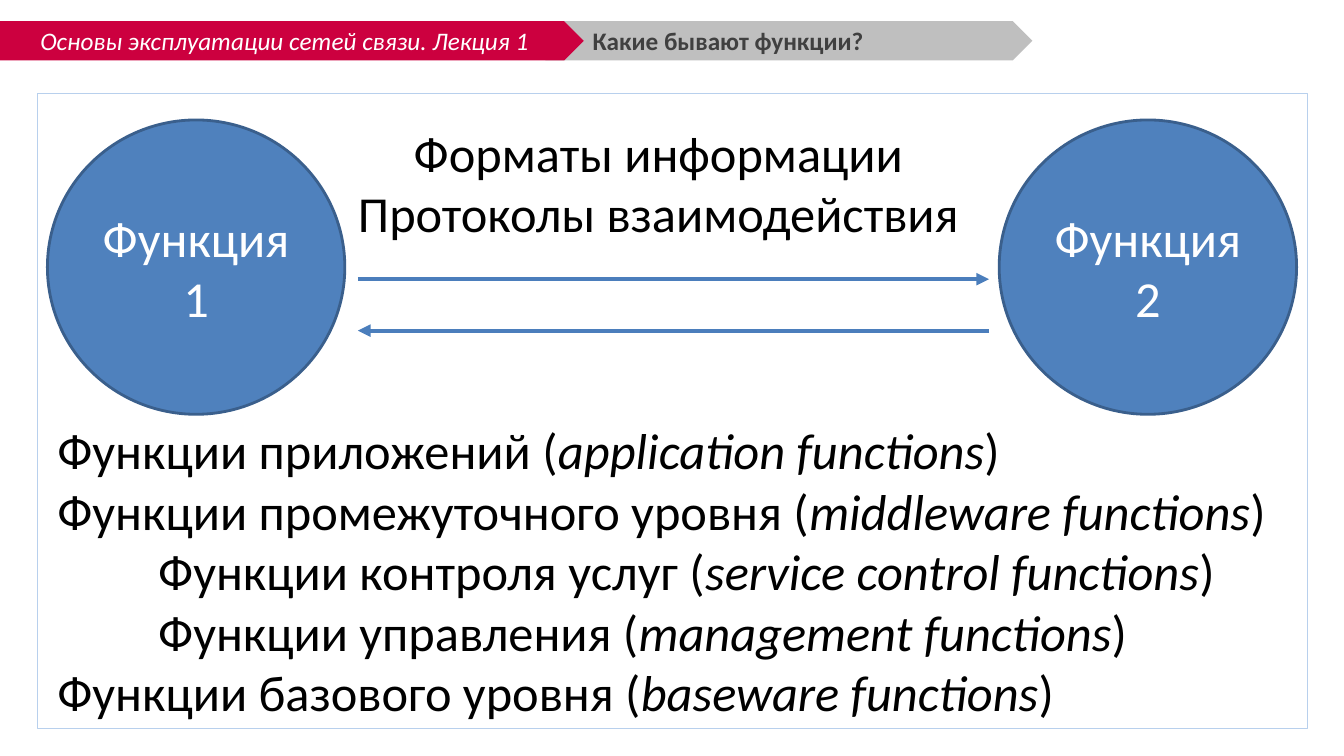
"""Build a lecture slide on how network functions interact."""
from lxml import etree
from pptx import Presentation
from pptx import util as u
from pptx.dml.color import RGBColor
from pptx.enum import shapes, text
from pptx.oxml.ns import qn

COLS, ROWS = 133.3, 75
CELL = u.Inches(0.1)
WHITE = RGBColor(0xFF, 0xFF, 0xFF)
BLACK = RGBColor(0, 0, 0)
RED = RGBColor(0xCC, 0x00, 0x3F)
GREY = RGBColor(0xBF, 0xBF, 0xBF)
DARK = RGBColor(0x40, 0x40, 0x40)
PALE = RGBColor(0xB8, 0xD0, 0xED)
BLUE = RGBColor(0x4F, 0x81, 0xBD)
EDGE = RGBColor(0x3A, 0x5F, 0x8C)
ARROW = RGBColor(0x4B, 0x7E, 0xBC)
KIND = shapes.MSO_SHAPE
ALIGN = text.PP_ALIGN
MID = text.MSO_ANCHOR.MIDDLE

LAYERS = [
    (0, "Функции приложений", "application functions"),
    (0, "Функции промежуточного уровня", "middleware functions"),
    (1, "Функции контроля услуг", "service control functions"),
    (1, "Функции управления", "management functions"),
    (0, "Функции базового уровня", "baseware functions"),
]


def cells(*nums):
    """Turn counts of grid cells into lengths."""
    return [round(n * CELL) for n in nums]


def style(para, size, color, align=ALIGN.LEFT, bold=None, slant=None):
    """Set the font and alignment of a paragraph."""
    para.alignment = align
    font = para.font
    font.name, font.size = "Calibri", u.Pt(size)
    font.color.rgb = color
    font.bold, font.italic = bold, slant


def shape(slide, kind, box, fill=None, line=None, width=1):
    """Add a flat preset shape."""
    item = slide.shapes.add_shape(kind, *cells(*box))
    item.shadow.inherit = False
    if fill is None:
        item.fill.background()
    else:
        item.fill.solid()
        item.fill.fore_color.rgb = fill
    if line is None:
        item.line.fill.background()
    else:
        item.line.color.rgb = line
        item.line.width = u.Pt(width)
    return item


def label(item, words, *look, **more):
    """Write one centred-height paragraph into a shape."""
    frame = item.text_frame
    frame.word_wrap = True
    frame.vertical_anchor = MID
    frame.text = words
    style(frame.paragraphs[0], *look, **more)


def arrow(slide, start, end):
    """Draw a line with a triangle at its end."""
    line = slide.shapes.add_connector(
        shapes.MSO_CONNECTOR.STRAIGHT, *cells(*start, *end))
    line.line.color.rgb = ARROW
    line.line.width = u.Pt(3)
    etree.SubElement(line.line._get_or_add_ln(), qn("a:tailEnd"), type="triangle")
    etree.SubElement(line._element.spPr, qn("a:effectLst"))


def header(slide, box):
    """Draw the lecture and topic banners."""
    left, top, wide, high = box
    split = left + 58.4
    shape(slide, KIND.PENTAGON, (split - 3.8, top, wide - 54.6, high), GREY)
    red = shape(slide, KIND.PENTAGON, (left, top, 58.4, high), RED)
    label(red, "Основы эксплуатации сетей связи. Лекция 1",
          18, WHITE, ALIGN.CENTER, slant=True)
    topic = slide.shapes.add_textbox(*cells(split - 0.1, top, 41.4, high))
    label(topic, "Какие бывают функции?", 18, DARK, bold=True)


def exchange(slide, box):
    """Draw two functions and the traffic between them."""
    left, top, wide, high = box
    disc = 29.5
    right = left + wide - disc
    for num, x in enumerate((left, right), 1):
        ball = shape(slide, KIND.OVAL, (x, top, disc, high), BLUE, EDGE, 2)
        label(ball, f"Функция {num}", 36, WHITE, ALIGN.CENTER)
    near, far = left + disc + 1.3, right - 1
    out, back = top + 15.8, top + 20.9
    arrow(slide, (near, out), (far, out))
    arrow(slide, (far, back), (near, back))
    note = slide.shapes.add_textbox(*cells(left + 27.7, top - 0.3, 65.8, 13.1))
    frame = note.text_frame
    frame.word_wrap = True
    frame.text = "Форматы информации\nПротоколы взаимодействия"
    for para in frame.paragraphs:
        style(para, 36, BLACK, ALIGN.CENTER)


def listing(slide, box):
    """List the function layers with their English terms."""
    frame = slide.shapes.add_textbox(*cells(*box)).text_frame
    frame.word_wrap = True
    for row, (depth, name, term) in enumerate(LAYERS):
        para = frame.add_paragraph() if row else frame.paragraphs[0]
        para._p.get_or_add_pPr().set("marL", str(u.Inches(depth)))
        style(para, 36, BLACK)
        for words, slant in ((f"{name} (", False), (term, True), (")", False)):
            run = para.add_run()
            run.text = words
            run.font.italic = slant


def main():
    """Build and save the slide."""
    deck = Presentation()
    deck.slide_width, deck.slide_height = cells(COLS, ROWS)
    slide = deck.slides.add_slide(deck.slide_layouts[6])
    header(slide, (-0.5, 2.1, 102.9, 3.9))
    shape(slide, KIND.RECTANGLE, (3.7, 9.2, 126, 63), line=PALE, width=0.25)
    exchange(slide, (4.7, 11.9, 123.9, 29.2))
    listing(slide, (4.7, 41.1, 123.9, 31.3))
    deck.save("out.pptx")


if __name__ == "__main__":
    main()
